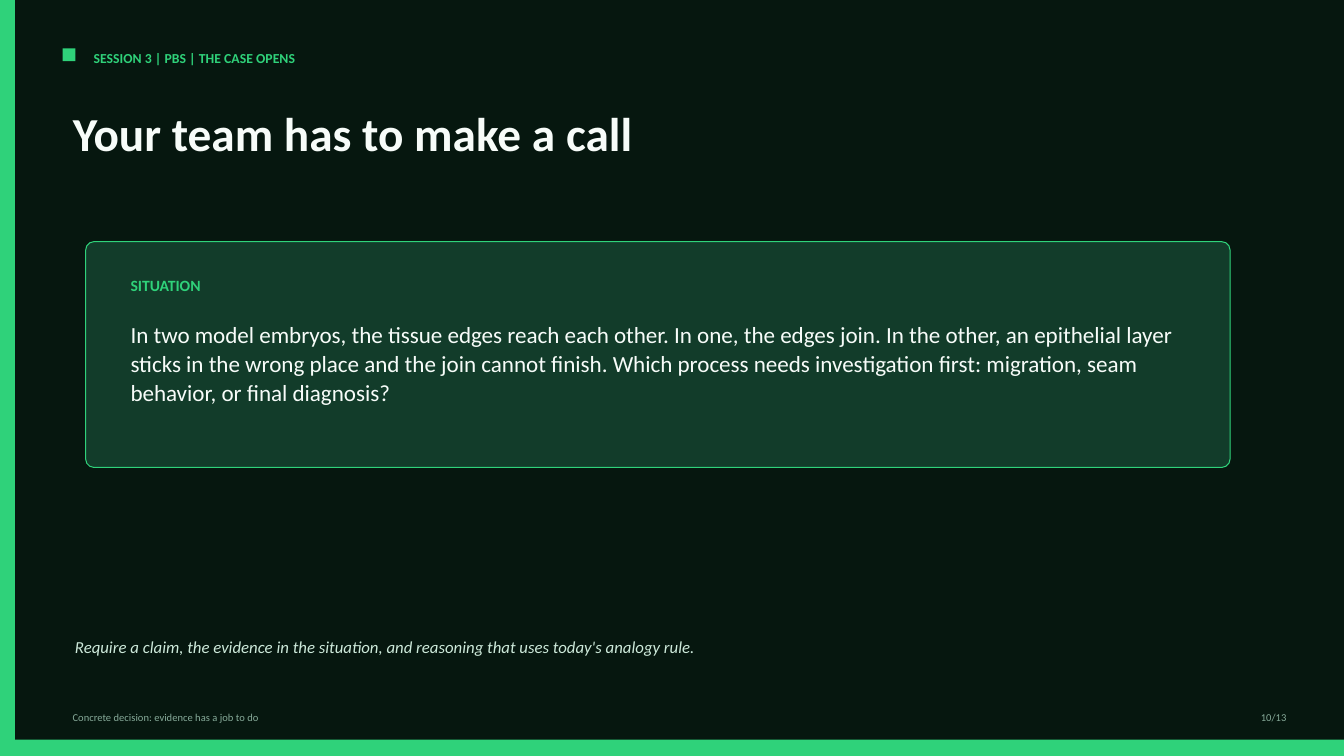
from dataclasses import dataclass

from pptx import Presentation
from pptx.dml.color import RGBColor
from pptx.enum.shapes import MSO_SHAPE
from pptx.enum.text import MSO_ANCHOR, MSO_AUTO_SIZE, PP_ALIGN
from pptx.util import Cm, Pt

RECT, ROUNDED = MSO_SHAPE.RECTANGLE, MSO_SHAPE.ROUNDED_RECTANGLE
TOP, NO_FIT = MSO_ANCHOR.TOP, MSO_AUTO_SIZE.NONE
LEFT, RIGHT = PP_ALIGN.LEFT, PP_ALIGN.RIGHT


@dataclass(frozen=True)
class Theme:
    font: str = "Calibri"
    background: RGBColor = RGBColor.from_string("06170F")
    accent: RGBColor = RGBColor.from_string("2FD27A")
    panel: RGBColor = RGBColor.from_string("123C2A")
    light: RGBColor = RGBColor.from_string("F7FCF9")
    soft: RGBColor = RGBColor.from_string("CDE9DA")
    muted: RGBColor = RGBColor.from_string("87AB9A")
    title: float = 33.8
    body: float = 16.5
    note: float = 12
    label: float = 11.2
    kicker: float = 9.8
    footer: float = 7.5


THEME = Theme()
WIDTH, HEIGHT = 33.87, 19.05


def place(shape, box):
    shape.left, shape.top, shape.width, shape.height = map(Cm, box)


def write(shape, text, size, color, bold=False, italic=False,
          align=LEFT, spacing=None):
    tf = shape.text_frame
    tf.word_wrap = True
    tf.auto_size = NO_FIT
    tf.vertical_anchor = TOP
    p = tf.paragraphs[0]
    p.text = text
    p.alignment = align
    if spacing:
        p.line_spacing = spacing
    font = p.font
    font.name, font.size = THEME.font, Pt(size)
    font.bold, font.italic = bold, italic
    font.color.rgb = color


def add_title(s, box, text):
    place(s.shapes.title, box)
    write(s.shapes.title, text, THEME.title, THEME.light, bold=True, spacing=0.92)


def add_text(s, box, text, size, color, **style):
    write(s.shapes.add_textbox(*map(Cm, box)), text, size, color, **style)


def add_block(s, box, fill, kind=RECT):
    sp = s.shapes.add_shape(kind, *map(Cm, box))
    sp.shadow.inherit = False
    sp.fill.solid()
    sp.fill.fore_color.rgb = fill
    sp.line.fill.background()
    return sp


def add_panel(s, box):
    sp = add_block(s, box, THEME.panel, ROUNDED)
    sp.adjustments[0] = 0.037
    sp.line.color.rgb = THEME.accent
    sp.line.width = Pt(0.75)


def main():
    prs = Presentation()
    prs.slide_width, prs.slide_height = Cm(WIDTH), Cm(HEIGHT)
    s = prs.slides.add_slide(prs.slide_layouts[5])
    s.background.fill.solid()
    s.background.fill.fore_color.rgb = THEME.background

    add_block(s, (0, 0, 0.38, HEIGHT), THEME.accent)
    add_block(s, (0, 18.64, WIDTH, 0.41), THEME.accent)
    add_block(s, (1.58, 1.22, 0.32, 0.32), THEME.accent)
    add_text(s, (2.11, 1.14, 16.4, 0.64), "SESSION 3 | PBS | THE CASE OPENS",
             THEME.kicker, THEME.accent, bold=True)
    add_title(s, (1.58, 2.64, 29.1, 2.24), "Your team has to make a call")

    add_panel(s, (2.16, 6.09, 28.84, 5.69))
    add_text(s, (3.04, 6.83, 6.88, 0.66), "SITUATION",
             THEME.label, THEME.accent, bold=True)
    add_text(s, (3.04, 7.92, 27.13, 3.12),
             "In two model embryos, the tissue edges reach each other. In one, "
             "the edges join. In the other, an epithelial layer sticks in the "
             "wrong place and the join cannot finish. Which process needs "
             "investigation first: migration, seam behavior, or final diagnosis?",
             THEME.body, THEME.light, spacing=1.05)

    add_text(s, (1.64, 15.88, 28.58, 1.17),
             "Require a claim, the evidence in the situation, and reasoning "
             "that uses today's analogy rule.",
             THEME.note, THEME.soft, italic=True, spacing=1.1)
    add_text(s, (1.58, 17.78, 23.83, 0.48),
             "Concrete decision: evidence has a job to do",
             THEME.footer, THEME.muted)
    add_text(s, (30.56, 17.78, 2.11, 0.48), "10/13",
             THEME.footer, THEME.muted, align=RIGHT)
    prs.save("out.pptx")


if __name__ == "__main__":
    main()
